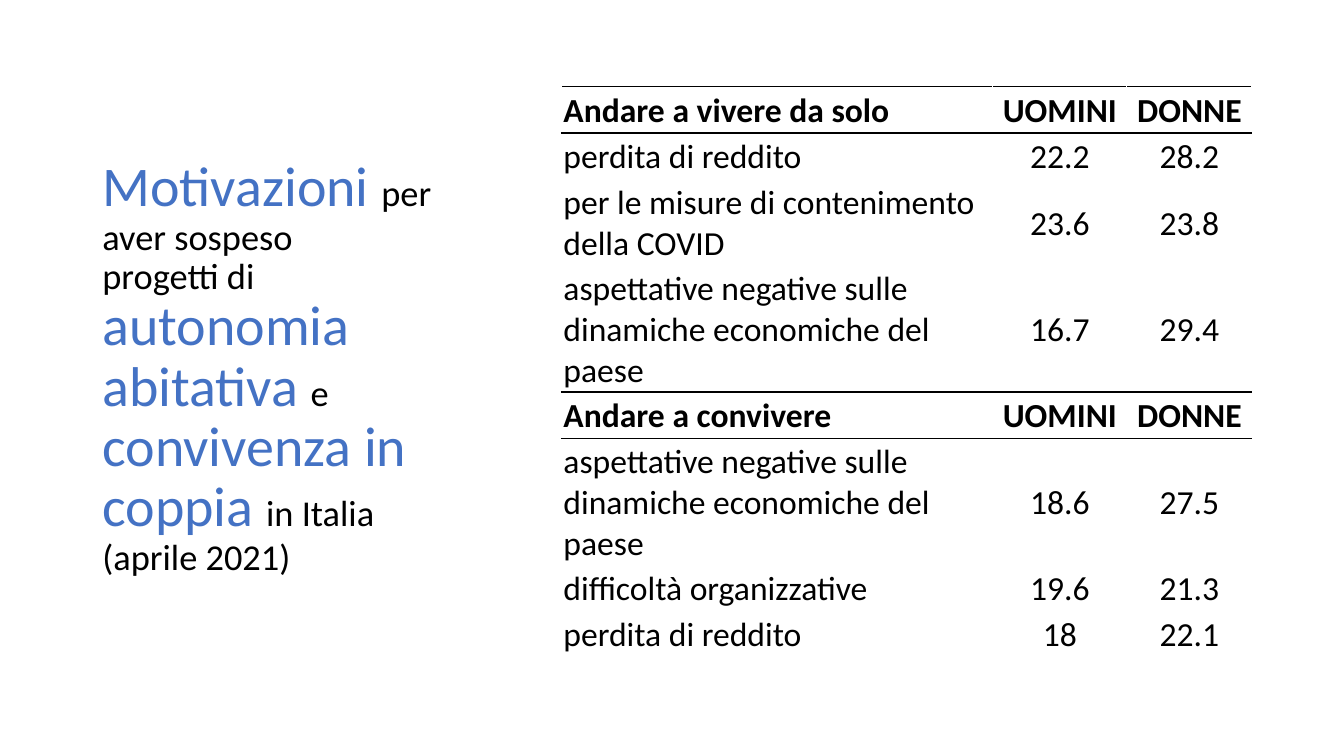
from lxml import etree
from pptx import Presentation
from pptx.dml.color import RGBColor
from pptx.enum.text import MSO_ANCHOR, PP_ALIGN
from pptx.oxml.ns import qn
from pptx.util import Cm, Pt

MIDDLE = MSO_ANCHOR.MIDDLE
LEFT, CENTER = PP_ALIGN.LEFT, PP_ALIGN.CENTER
FONT, BLACK, BLUE = "Calibri", "000000", "4472C4"
BIG, SMALL, TABLE_SIZE = 40, 26, 24

TITLE_RUNS = [
    ("Motivazioni ", BIG, BLUE),
    ("per aver sospeso ", SMALL, BLACK),
    ("\n", SMALL, BLACK),
    ("progetti di ", SMALL, BLACK),
    ("autonomia abitativa ", BIG, BLUE),
    ("e", SMALL, BLACK),
    (" ", BIG, BLACK),
    ("convivenza in coppia ", BIG, BLUE),
    ("in Italia", SMALL, BLACK),
    ("\n", SMALL, BLACK),
    ("(aprile 2021)", SMALL, BLACK),
]
SECTIONS = [
    ("Andare a vivere da solo", [
        ("perdita di reddito", "22.2", "28.2", 1),
        ("per le misure di contenimento della COVID", "23.6", "23.8", 2),
        ("aspettative negative sulle dinamiche economiche del paese", "16.7", "29.4", 3),
    ]),
    ("Andare a convivere", [
        ("aspettative negative sulle dinamiche economiche del paese", "18.6", "27.5", 3),
        ("difficoltà organizzative", "19.6", "21.3", 1),
        ("perdita di reddito", "18", "22.1", 1),
    ]),
]
GROUPS = ("UOMINI", "DONNE")
COLUMN_WIDTHS = (10.87, 3.38, 3.15)
ROW_HEIGHTS = {1: 1.17, 2: 2.18, 3: 3.18}


def color(hex_text):
    return RGBColor.from_string(hex_text)


def add_border(cell, side):
    line = etree.SubElement(cell._tc.get_or_add_tcPr(), qn(f"a:ln{side}"), w=str(Pt(1)))
    fill = etree.SubElement(line, qn("a:solidFill"))
    etree.SubElement(fill, qn("a:srgbClr"), val=BLACK)


def add_title(slide):
    frame = slide.shapes.add_textbox(Cm(2.33), Cm(1.55), Cm(9.37), Cm(15.46)).text_frame
    frame.word_wrap = True
    frame.vertical_anchor = MIDDLE
    paragraph = frame.paragraphs[0]
    paragraph.line_spacing = 0.9
    paragraph.font.name = FONT
    for text, size, hex_text in TITLE_RUNS:
        if text == "\n":
            paragraph.add_line_break()
            continue
        run = paragraph.add_run()
        run.text = text
        run.font.name = FONT
        run.font.size = Pt(size)
        run.font.color.rgb = color(hex_text)


def fill_cell(cell, text, alignment, borders, bold):
    cell.text = text
    cell.vertical_anchor = MIDDLE
    cell.margin_left = cell.margin_right = cell.margin_top = Cm(0.05)
    cell.margin_bottom = 0
    paragraph = cell.text_frame.paragraphs[0]
    paragraph.alignment = alignment
    paragraph.font.name = FONT
    paragraph.font.size = Pt(TABLE_SIZE)
    paragraph.font.bold = bold
    paragraph.font.color.rgb = color(BLACK)
    for side in borders:
        add_border(cell, side)
    cell.fill.background()


def add_reasons_table(slide):
    rows = []
    for heading, reasons in SECTIONS:
        rows.append(((heading, *GROUPS), 1, True))
        rows.extend((reason[:3], reason[3], False) for reason in reasons)
    heights = [ROW_HEIGHTS[lines] for _, lines, _ in rows]
    table = slide.shapes.add_table(
        len(rows), len(COLUMN_WIDTHS), Cm(14.15), Cm(2.18),
        Cm(sum(COLUMN_WIDTHS)), Cm(sum(heights))).table
    table.first_row = table.horz_banding = False
    for column, width in zip(table.columns, COLUMN_WIDTHS):
        column.width = Cm(width)
    for index, (texts, _, is_heading) in enumerate(rows):
        table.rows[index].height = Cm(heights[index])
        after_heading = index > 0 and rows[index - 1][2]
        before_heading = index + 1 < len(rows) and rows[index + 1][2]
        borders = ("T" if is_heading or after_heading else "") + (
            "B" if is_heading or before_heading else "")
        for position, text in enumerate(texts):
            fill_cell(table.cell(index, position), text,
                      CENTER if position else LEFT, borders, is_heading)


def main():
    """Build the slide on suspended plans for independence and cohabitation."""
    presentation = Presentation()
    presentation.slide_width, presentation.slide_height = Cm(33.87), Cm(19.05)
    slide = presentation.slides.add_slide(presentation.slide_layouts[6])
    add_title(slide)
    add_reasons_table(slide)
    presentation.save("out.pptx")


if __name__ == "__main__":
    main()
